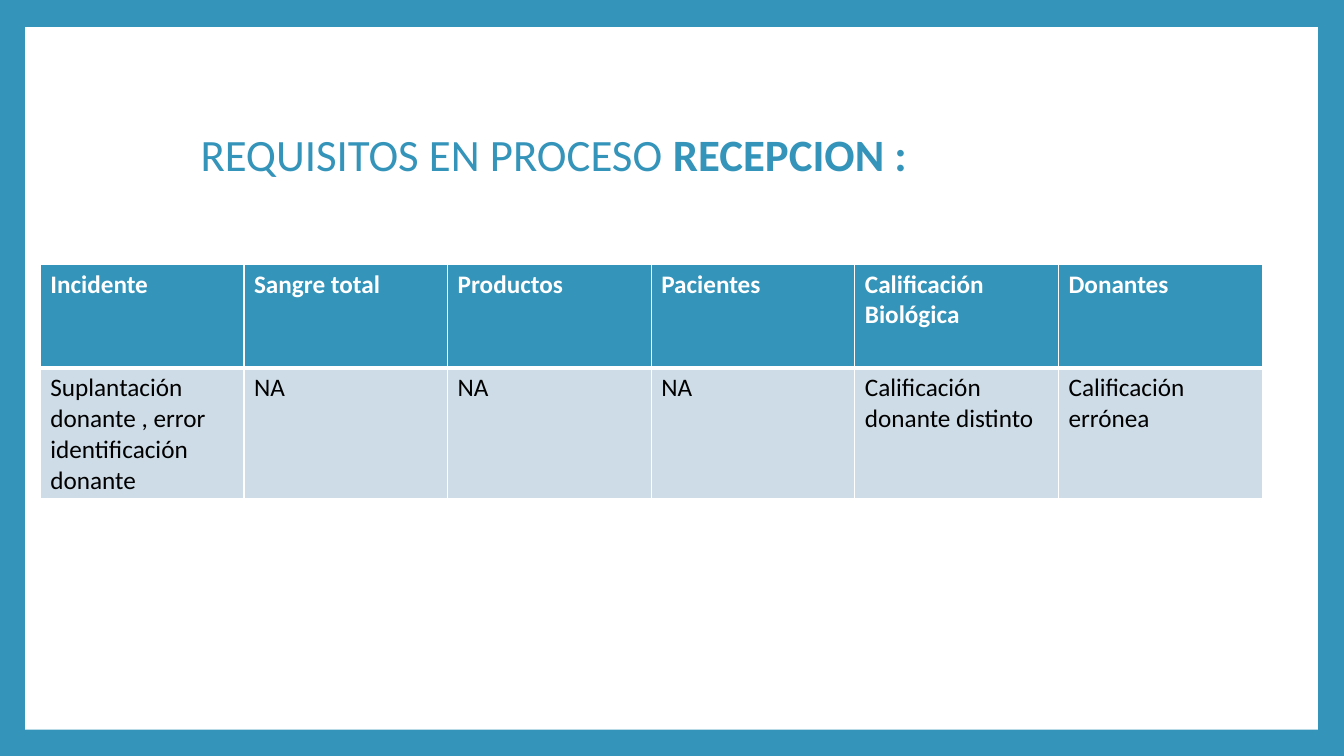
from lxml.etree import SubElement
from pptx import Presentation
from pptx.dml.color import RGBColor
from pptx.enum.shapes import MSO_SHAPE
from pptx.enum.text import MSO_ANCHOR
from pptx.oxml.ns import qn
from pptx.util import Inches, Pt

BLUE, PALE, WHITE, BLACK = "3494BA", "CEDCE7", "FFFFFF", "000000"


def paint(fill, color):
    fill.solid()
    fill.fore_color.rgb = RGBColor.from_string(color)


def add_run(p, text, color, **fmt):
    r = p.add_run()
    r.text = text
    paint(r.font.fill, color)
    for name, value in {"name": "Calibri", **fmt}.items():
        setattr(r.font, name, value)


prs = Presentation()
prs.slide_width, prs.slide_height = Inches(13.33), Inches(7.5)
s = prs.slides.add_slide(prs.slide_layouts[6])

# Blue frame around a white panel
paint(s.background.fill, BLUE)
sp = s.shapes.add_shape(MSO_SHAPE.RECTANGLE, Inches(0.25), Inches(0.27),
                        Inches(12.82), Inches(6.97))
sp.shadow.inherit = False
paint(sp.fill, WHITE)
sp.line.fill.background()

# Title
tf = s.shapes.add_textbox(Inches(1.89), Inches(1.15),
                          Inches(10.48), Inches(0.82)).text_frame
tf.word_wrap = True
tf.vertical_anchor = MSO_ANCHOR.MIDDLE
p = tf.paragraphs[0]
p.line_spacing = 0.9
add_run(p, "REQUISITOS EN PROCESO ", BLUE, size=Pt(32))
add_run(p, "RECEPCION :", BLUE, size=Pt(32), bold=True)

# Incident table
rows = [
    ["Incidente", "Sangre total", "Productos", "Pacientes",
     "Calificación Biológica", "Donantes"],
    ["Suplantación donante , error identificación donante", "NA", "NA", "NA",
     "Calificación donante distinto", "Calificación errónea"],
]
row_styles = [
    {"height": 1.03, "fill": BLUE, "color": WHITE, "bold": True,
     "borders": {"lnL": 1, "lnR": 1, "lnT": 1, "lnB": 3}},
    {"height": 1.3, "fill": PALE, "color": BLACK, "bold": False,
     "borders": {"lnL": 1, "lnR": 1, "lnT": 3, "lnB": 1}},
]
table = s.shapes.add_table(len(rows), len(rows[0]), Inches(0.4), Inches(2.62),
                           Inches(12.12), Inches(2.33)).table
table.horz_banding = False
for row, texts, style in zip(table.rows, rows, row_styles):
    row.height = Inches(style["height"])
    for cell, text in zip(row.cells, texts):
        tcPr = cell._tc.get_or_add_tcPr()
        for side, width in style["borders"].items():
            ln = SubElement(tcPr, qn(f"a:{side}"), w=str(Pt(width)))
            SubElement(SubElement(ln, qn("a:solidFill")), qn("a:srgbClr"), val=WHITE)
        paint(cell.fill, style["fill"])
        add_run(cell.text_frame.paragraphs[0], text, style["color"],
                size=Pt(18), bold=style["bold"])

prs.save("out.pptx")
